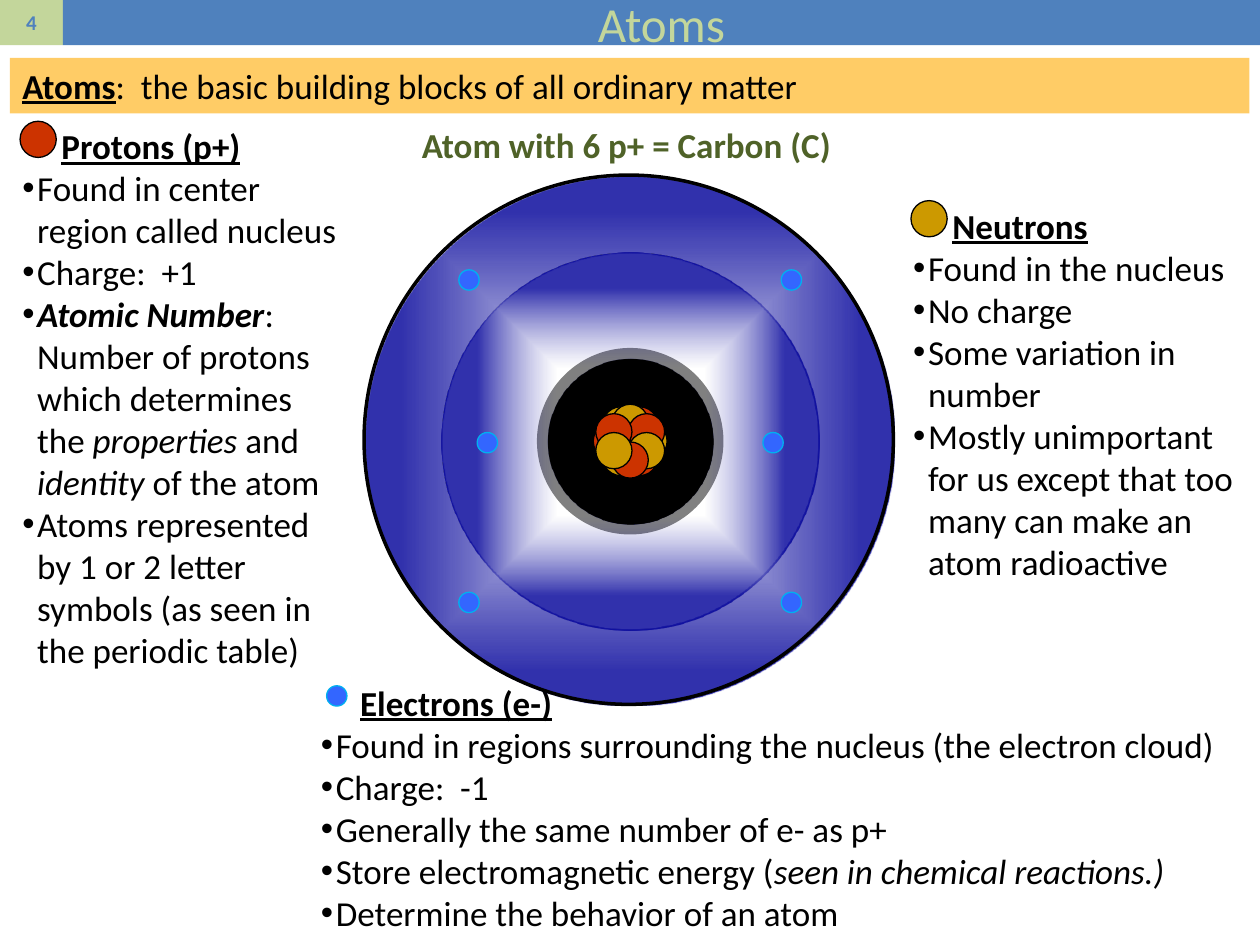
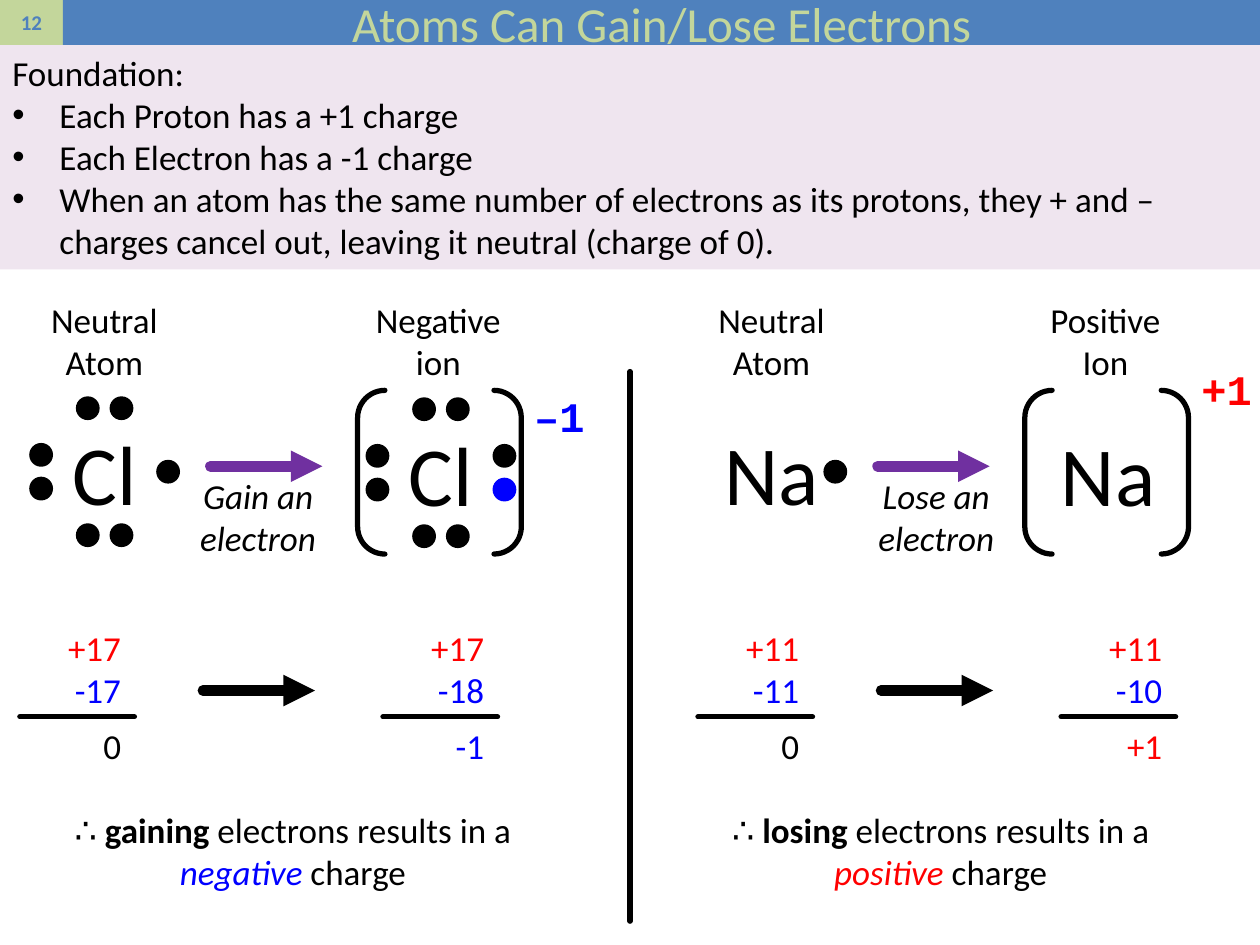
from math import cos, radians, sin

from lxml.etree import SubElement
from pptx import Presentation
from pptx.dml.color import RGBColor
from pptx.enum.shapes import MSO_CONNECTOR, MSO_SHAPE
from pptx.enum.text import MSO_ANCHOR, PP_ALIGN
from pptx.oxml.ns import qn
from pptx.util import Cm, Pt

COLORS = {
    "black": "000000", "white": "FFFFFF", "red": "FF0000", "blue": "0000FF",
    "title_band": "4F81BD", "pale_green": "C3D69B", "dark_green": "4F6228",
    "definition": "FFCC66", "foundation": "EFE5EF", "purple": "7030A0",
    "proton": "CC3300", "neutron": "CC9900", "electron": "3366FF",
    "electron_edge": "00B0F0", "cloud": "000099",
}
FONT = "Calibri"
SLIDE_W, SLIDE_H = 25.4, 19.05
BAND_H, NUMBER_W = 0.91, 1.27
NUCLEON_D, ELECTRON_D, DOT_D = 0.73, 0.41, 0.48
DOT_R, DOT_GAP = 1.28, 0.34
PAIRS = ([(dx, dy) for dy in (-DOT_R, DOT_R) for dx in (-DOT_GAP, DOT_GAP)]
         + [(-DOT_R, dy) for dy in (-DOT_GAP, DOT_GAP)])


def rgb(name):
    """Return the palette colour with this name."""
    return RGBColor.from_string(COLORS[name])


def add_bullet(p, indent):
    """Give a paragraph a hanging bullet."""
    pPr = p._p.get_or_add_pPr()
    pPr.set("marL", str(Cm(indent)))
    pPr.set("indent", str(-Cm(indent)))
    SubElement(pPr, qn("a:buFont"), typeface="Arial")
    SubElement(pPr, qn("a:buChar"), char="•")


def add_tab_stop(p, pos):
    """Set the tab stop that clears room for a heading's icon."""
    tabs = SubElement(p._p.get_or_add_pPr(), qn("a:tabLst"))
    SubElement(tabs, qn("a:tab"), pos=str(Cm(pos)), algn="l")


def write(sp, paragraphs, style="black", size=20, align=PP_ALIGN.LEFT,
          anchor=MSO_ANCHOR.TOP, font=FONT):
    """Fill a shape with paragraphs of plain or (text, style) runs."""
    tf = sp.text_frame
    tf.word_wrap = True
    tf.vertical_anchor = anchor
    for i, runs in enumerate(paragraphs):
        p = tf.add_paragraph() if i else tf.paragraphs[0]
        p.alignment = align
        for run in [runs] if isinstance(runs, (str, tuple)) else runs:
            text, words = (run, style) if isinstance(run, str) else run
            words = words.split()
            r = p.add_run()
            r.text = text
            r.font.name, r.font.size = font, Pt(size)
            r.font.bold = "bold" in words
            r.font.italic = "italic" in words
            r.font.underline = "underline" in words
            r.font.color.rgb = rgb(next((w for w in words if w in COLORS), "black"))
    return tf.paragraphs


def add_text(slide, left, top, width, height, paragraphs, **kwargs):
    """Add a text box and return its paragraphs."""
    sp = slide.shapes.add_textbox(Cm(left), Cm(top), Cm(width), Cm(height))
    return write(sp, paragraphs, **kwargs)


def add_shape(slide, kind, left, top, width, height, fill=None, line=None, weight=0.75):
    """Add a flat preset shape."""
    sp = slide.shapes.add_shape(kind, Cm(left), Cm(top), Cm(width), Cm(height))
    sp.shadow.inherit = False
    if fill:
        sp.fill.solid()
        sp.fill.fore_color.rgb = rgb(fill)
    else:
        sp.fill.background()
    if line:
        sp.line.color.rgb = rgb(line)
        sp.line.width = Pt(weight)
    else:
        sp.line.fill.background()
    return sp


def add_ball(slide, x, y, d, fill, line=None):
    """Add a circle centred on a point."""
    return add_shape(slide, MSO_SHAPE.OVAL, x - d / 2, y - d / 2, d, d, fill, line)


def add_electron(slide, x, y):
    """Add an electron centred on a point."""
    add_ball(slide, x, y, ELECTRON_D, "electron", "electron_edge")


def add_nucleon(slide, x, y, kind):
    """Add a proton or neutron centred on a point."""
    add_ball(slide, x, y, NUCLEON_D, kind, "black")


def add_line(slide, x1, y1, x2, y2, color="black", weight=3, arrow=False):
    """Add a round-capped line, with an arrowhead if asked."""
    cn = slide.shapes.add_connector(MSO_CONNECTOR.STRAIGHT, Cm(x1), Cm(y1), Cm(x2), Cm(y2))
    cn.line.color.rgb = rgb(color)
    cn.line.width = Pt(weight)
    ln = cn.line._get_or_add_ln()
    ln.set("cap", "rnd")
    if arrow:
        SubElement(ln, qn("a:tailEnd"), type="triangle")
    SubElement(cn._element.spPr, qn("a:effectLst"))


def add_cloud_ring(slide, x, y, d, hole, stops):
    """Add a donut shaded outwards from its centre."""
    sp = add_shape(slide, MSO_SHAPE.DONUT, x - d / 2, y - d / 2, d, d)
    sp.adjustments[0] = hole
    sp.fill.gradient()
    grad = sp._element.spPr.find(qn("a:gradFill"))
    for child in list(grad):
        grad.remove(child)
    gs_list = SubElement(grad, qn("a:gsLst"))
    for pos, color, alpha in stops:
        gs = SubElement(gs_list, qn("a:gs"), pos=str(pos * 1000))
        clr = SubElement(gs, qn("a:srgbClr"), val=COLORS[color])
        SubElement(clr, qn("a:alpha"), val=str(alpha * 1000))
    shade = SubElement(grad, qn("a:path"), {"path": "shape"})
    SubElement(shade, qn("a:fillToRect"), {side: "50000" for side in "ltrb"})


def start_slide(prs, number, title):
    """Add a blank slide with its number tab and title band."""
    slide = prs.slides.add_slide(prs.slide_layouts[6])
    centre = {"align": PP_ALIGN.CENTER, "anchor": MSO_ANCHOR.MIDDLE}
    tab = add_shape(slide, MSO_SHAPE.RECTANGLE, 0, 0, NUMBER_W, BAND_H, "pale_green")
    write(tab, [str(number)], "title_band bold", 12, **centre)
    band = add_shape(slide, MSO_SHAPE.RECTANGLE, NUMBER_W, 0, SLIDE_W - NUMBER_W, BAND_H,
                     "title_band")
    write(band, [title], "pale_green", 28, **centre)
    return slide


def particle_notes(slide, left, top, width, height, heading, notes):
    """Add an underlined heading, leaving room for an icon, and bulleted notes."""
    first, *rest = add_text(slide, left, top, width, height,
                            [("\t" + heading, "bold underline"), *notes])
    add_tab_stop(first, 0.79)
    for p in rest:
        add_bullet(p, 0.3)
    return left + 0.57, top + 0.42


def atom_model(slide, left, top, size):
    """Draw the carbon atom inside a square box."""
    x, y = left + size / 2, top + size / 2
    add_ball(slide, x, y, 3.76, "black")
    add_cloud_ring(slide, x, y, size, 0.145, [(13, "white", 100), (87, "cloud", 80)])
    add_cloud_ring(slide, x, y, 7.62, 0.281, [(39, "white", 50), (81, "cloud", 80)])
    for side in (-1, 1):
        add_electron(slide, x + side * 2.88, y + 0.03)
        for level in (-1, 1):
            add_electron(slide, x + side * 3.25, y + level * 3.25)
    ring = [(240, "neutron"), (300, "proton"), (0, "neutron"),
            (180, "proton"), (60, "proton"), (120, "neutron")]
    for turn in (0, 30):
        for angle, kind in ring:
            a = radians(angle + turn)
            add_nucleon(slide, x + 0.38 * cos(a), y + 0.38 * sin(a), kind)
    add_shape(slide, MSO_SHAPE.OVAL, left - 0.03, top - 0.03, size, size, None, "black", 2)


def atoms_slide(prs):
    """Build the slide on the parts of an atom."""
    slide = start_slide(prs, 4, "Atoms")
    electron_icon = particle_notes(slide, 6.22, 13.61, 19.18, 5.38, "Electrons (e-)", [
        "Found in regions surrounding the nucleus (the electron cloud)",
        "Charge:  -1",
        "Generally the same number of e- as p+",
        ["Store electromagnetic energy (", ("seen in chemical reactions.)", "italic")],
        "Determine the behavior of an atom",
    ])
    banner = add_shape(slide, MSO_SHAPE.RECTANGLE, 0.2, 1.17, 24.99, 1.12, "definition")
    write(banner, [[("Atoms", "bold underline"),
                    ":  the basic building blocks of all ordinary matter"]])
    atom_model(slide, 7.37, 3.56, 10.67)
    add_text(slide, 7.32, 2.36, 10.62, 1.12, ["Atom with 6 p+ = Carbon (C)"],
             style="dark_green bold", align=PP_ALIGN.CENTER)
    proton_icon = particle_notes(slide, 0.2, 2.39, 7.01, 11.38, "Protons (p+)", [
        "Found in center region called nucleus",
        "Charge:  +1",
        [("Atomic Number", "bold italic"), ":  Number of protons which determines the ",
         ("properties", "italic"), " and ", ("identity", "italic"), " of the atom"],
        "Atoms represented by 1 or 2 letter symbols (as seen in the periodic table)",
    ])
    neutron_icon = particle_notes(slide, 18.16, 3.99, 7.01, 7.95, "Neutrons", [
        "Found in the nucleus",
        "No charge",
        "Some variation in number",
        "Mostly unimportant for us except that too many can make an atom radioactive",
    ])
    add_nucleon(slide, *proton_icon, "proton")
    add_nucleon(slide, *neutron_icon, "neutron")
    add_electron(slide, *electron_icon)


def lewis_symbol(slide, x, y, symbol, dots, gained=()):
    """Draw an element symbol with its valence dots around a centre."""
    add_text(slide, x - 1.5, y - 1.16, 3, 2.31, [symbol], size=48,
             align=PP_ALIGN.CENTER, anchor=MSO_ANCHOR.MIDDLE)
    for points, color in ((dots, "black"), (gained, "blue")):
        for dx, dy in points:
            add_ball(slide, x + dx, y + dy, DOT_D, color)


def reaction(slide, left, top, symbol, ion_name, dots, ion_dots, gained,
             step, step_dx, charge, charge_dy, color):
    """Draw a neutral atom turning into its bracketed ion."""
    for dx, caption in ((0, "Neutral Atom"), (6.73, ion_name)):
        add_text(slide, left + dx, top, 3.65, 1.96, [caption], align=PP_ALIGN.CENTER)
    lewis_symbol(slide, left + 1.83, top + 3.62, symbol, dots)
    lewis_symbol(slide, left + 8.61, top + 3.64, symbol, ion_dots, gained)
    bracket = add_shape(slide, MSO_SHAPE.DOUBLE_BRACKET, left + 6.93, top + 1.98, 3.3, 3.3,
                        None, "black", 3)
    bracket.line._get_or_add_ln().set("cap", "rnd")
    add_text(slide, left + 10.24, top + charge_dy, 1.78, 1.27, [charge],
             style=color + " bold", size=24, font="Courier New")
    add_line(slide, left + 3.96, top + 3.51, left + 6.22, top + 3.51, "purple", 6, True)
    add_text(slide, left + step_dx, top + 3.56, 3.05, 1.96, [step], style="italic",
             align=PP_ALIGN.CENTER)


def charge_sums(slide, left, top, sums):
    """Draw the charge totals before and after, joined by an arrow."""
    for i, (protons, electrons, total, color) in enumerate(sums):
        x = left + i * 7.32
        add_text(slide, x, top, 2.21, 1.96, [(protons, "red"), (electrons, "blue")],
                 align=PP_ALIGN.RIGHT)
        add_line(slide, x - 0.08, top + 1.95, x + 2.23, top + 1.95)
        add_text(slide, x, top + 1.98, 2.21, 1.12, [total], style=color,
                 align=PP_ALIGN.RIGHT)
    add_line(slide, left + 3.61, top + 1.42, left + 5.87, top + 1.42, weight=6, arrow=True)


def conclusion(slide, left, top, change, sign, color):
    """State what the change of electrons does to the charge."""
    add_text(slide, left, top, 10.85, 1.96,
             [["∴ ", (change, "bold"), " electrons results in a ",
               (sign, "italic " + color), " charge"]], align=PP_ALIGN.CENTER)


def ions_slide(prs):
    """Build the slide on gaining and losing electrons."""
    slide = start_slide(prs, 12, "Atoms Can Gain/Lose Electrons")
    panel = add_shape(slide, MSO_SHAPE.RECTANGLE, 0, BAND_H, SLIDE_W, 4.52, "foundation")
    _, *points = write(panel, [
        "Foundation:",
        "Each Proton has a +1 charge",
        "Each Electron has a -1 charge",
        "When an atom has the same number of electrons as its protons, they + and – "
        "charges cancel out, leaving it neutral (charge of 0).",
    ])
    for p in points:
        add_bullet(p, 0.95)
    add_line(slide, SLIDE_W / 2, 7.49, SLIDE_W / 2, 18.57)
    single = [(DOT_R, 0)]
    reaction(slide, 0.28, 5.89, "Cl", "Negative ion", PAIRS + single,
             PAIRS + [(DOT_R, -DOT_GAP)], [(DOT_R, DOT_GAP)],
             "Gain an electron", 3.4, "–1", 1.86, "blue")
    reaction(slide, 13.73, 5.89, "Na", "Positive Ion", single, [], [],
             "Lose an electron", 3.62, "+1", 1.32, "red")
    charge_sums(slide, 0.48, 12.5, [("+17", "-17", "0", "black"), ("+17", "-18", "-1", "blue")])
    charge_sums(slide, 14.15, 12.5, [("+11", "-11", "0", "black"), ("+11", "-10", "+1", "red")])
    conclusion(slide, 0.48, 16.18, "gaining", "negative", "blue")
    conclusion(slide, 13.54, 16.18, "losing", "positive", "red")


def main():
    """Build and save the deck."""
    prs = Presentation()
    prs.slide_width, prs.slide_height = Cm(SLIDE_W), Cm(SLIDE_H)
    atoms_slide(prs)
    ions_slide(prs)
    prs.save("out.pptx")


if __name__ == "__main__":
    main()
